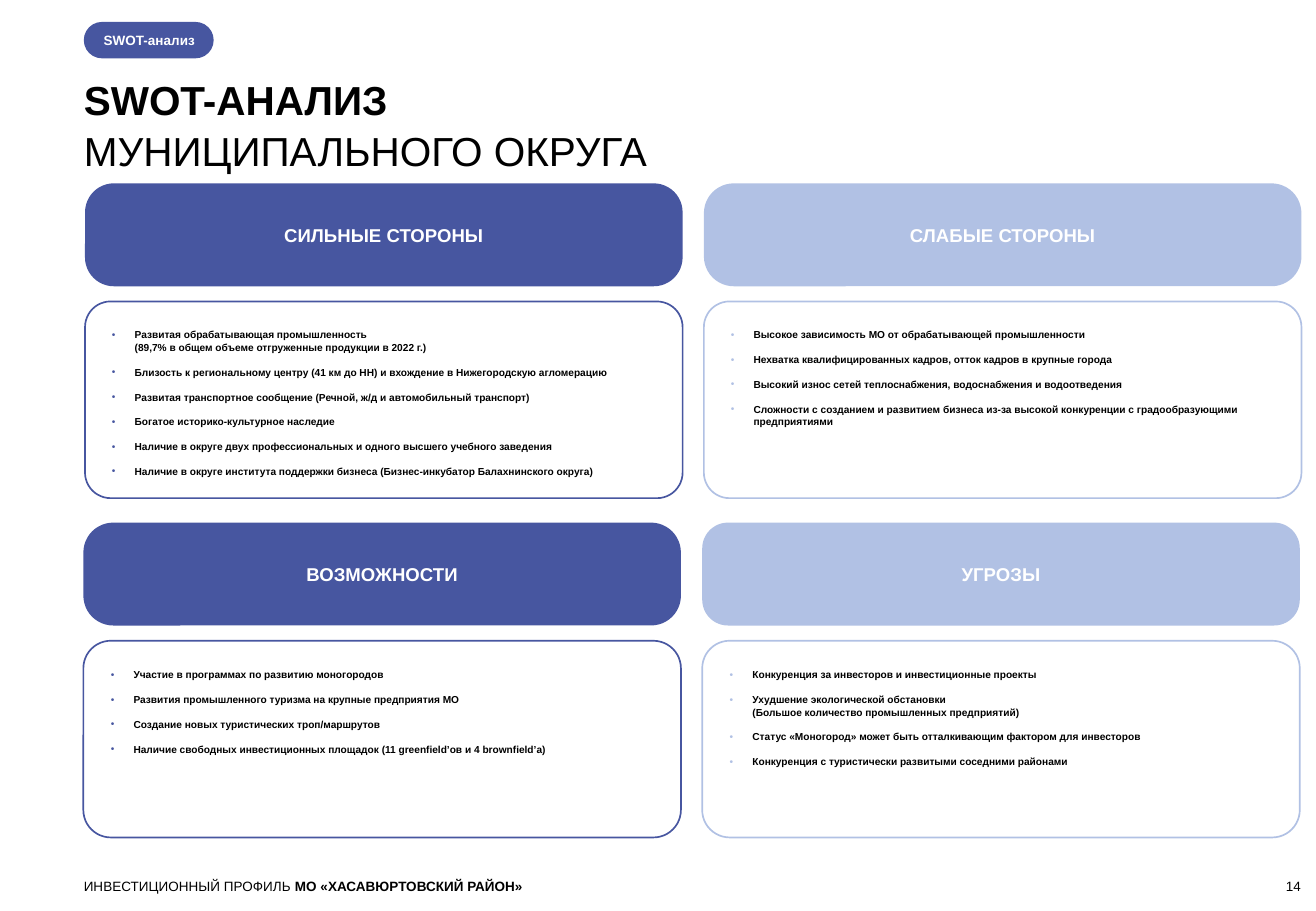
import pptx
import pptx.dml.color
import pptx.enum.shapes
import pptx.enum.text
import pptx.oxml.ns
import pptx.util
from lxml import etree

Pt = pptx.util.Pt
ALIGN = pptx.enum.text.PP_ALIGN
ANCHOR = pptx.enum.text.MSO_ANCHOR
DARK, LIGHT, WHITE, BLACK = "4756A0", "B1C1E4", "FFFFFF", "000000"


def color(value):
    return pptx.dml.color.RGBColor.from_string(value)


def write(shape, paragraphs, size, ink=BLACK, align=ALIGN.LEFT, anchor=ANCHOR.TOP,
          insets=(0, 0, 0, 0), bullet=None, gap=0, spacing=None):
    """Each paragraph is a list of (text, bold) runs; a newline breaks the line."""
    frame = shape.text_frame
    frame.word_wrap = True
    frame.vertical_anchor = anchor
    frame.margin_left, frame.margin_top, frame.margin_right, frame.margin_bottom = map(Pt, insets)
    for index, runs in enumerate(paragraphs):
        paragraph = frame.add_paragraph() if index else frame.paragraphs[0]
        paragraph.alignment = align
        if spacing:
            paragraph.line_spacing = spacing
        if index and gap:
            paragraph.space_before = Pt(gap)
        if bullet:
            properties = paragraph._p.get_or_add_pPr()
            properties.set("marL", str(Pt(13.5)))
            properties.set("indent", str(Pt(-13.5)))
            bullet_color = etree.SubElement(properties, pptx.oxml.ns.qn("a:buClr"))
            etree.SubElement(bullet_color, pptx.oxml.ns.qn("a:srgbClr"), val=bullet)
            etree.SubElement(properties, pptx.oxml.ns.qn("a:buFont"), typeface="Arial")
            etree.SubElement(properties, pptx.oxml.ns.qn("a:buChar"), char="•")
        for text, bold in runs:
            for number, line in enumerate(text.split("\n")):
                if number:
                    paragraph.add_line_break()
                run = paragraph.add_run()
                run.text = line
                run.font.name = "Arial"
                run.font.size = Pt(size)
                run.font.bold = bold
                run.font.color.rgb = color(ink)
        paragraph.font.size = Pt(size)


def rounded(left, top, width, height, radius, fill=None, line=None):
    shape = slide.shapes.add_shape(pptx.enum.shapes.MSO_SHAPE.ROUNDED_RECTANGLE,
                                   Pt(left), Pt(top), Pt(width), Pt(height))
    shape.adjustments[0] = radius
    shape.shadow.inherit = False
    if fill:
        shape.fill.solid()
        shape.fill.fore_color.rgb = color(fill)
    else:
        shape.fill.background()
    if line:
        shape.line.color.rgb = color(line)
        shape.line.width = Pt(1)
    else:
        shape.line.fill.background()
    return shape


presentation = pptx.Presentation()
presentation.slide_width, presentation.slide_height = Pt(780), Pt(540)
slide = presentation.slides.add_slide(presentation.slide_layouts[6])

# Section tag
tag = rounded(49.7, 13, 77, 21.6, 0.5, fill=DARK)
write(tag, [[("SWOT-анализ", True)]], 8, WHITE, anchor=ANCHOR.MIDDLE, insets=(8.6, 0, 0, 0))

# Title
title = slide.shapes.add_textbox(Pt(49.7), Pt(43.2), Pt(721.4), Pt(58.3))
write(title, [[("SWOT-АНАЛИЗ", True)], [("МУНИЦИПАЛЬНОГО ОКРУГА", False)]], 24, spacing=1.05)

# Four quadrants: left, top, accent, heading radius, body radius, heading, bullets
quadrants = [
    (50.4, 108.7, DARK, 0.28, 0.13, "СИЛЬНЫЕ СТОРОНЫ", [
        "Развитая обрабатывающая промышленность\n(89,7% в общем объеме отгруженные продукции в 2022 г.)",
        "Близость к региональному центру (41 км до НН) и вхождение в Нижегородскую агломерацию",
        "Развитая транспортное сообщение (Речной, ж/д и автомобильный транспорт)",
        "Богатое историко-культурное наследие",
        "Наличие в округе двух профессиональных и одного высшего учебного заведения",
        "Наличие в округе института поддержки бизнеса (Бизнес-инкубатор Балахнинского округа)",
    ]),
    (417.2, 108.7, LIGHT, 0.29, 0.13, "СЛАБЫЕ СТОРОНЫ", [
        "Высокое зависимость МО от обрабатывающей промышленности",
        "Нехватка квалифицированных кадров, отток кадров в крупные города",
        "Высокий износ сетей теплоснабжения, водоснабжения и водоотведения",
        "Сложности с созданием и развитием бизнеса из-за высокой конкуренции "
        "с градообразующими предприятиями",
    ]),
    (49.4, 309.8, DARK, 0.29, 0.14, "ВОЗМОЖНОСТИ", [
        "Участие в программах по развитию моногородов",
        "Развития промышленного туризма на крупные предприятия МО",
        "Создание новых туристических троп/маршрутов",
        "Наличие свободных инвестиционных площадок (11 greenfield’ов и 4 brownfield’а)",
    ]),
    (416.2, 309.8, LIGHT, 0.25, 0.14, "УГРОЗЫ", [
        "Конкуренция за инвесторов и инвестиционные проекты",
        "Ухудшение экологической обстановки\n(Большое количество промышленных предприятий)",
        "Статус «Моногород» может быть отталкивающим фактором для инвесторов",
        "Конкуренция с туристически развитыми соседними районами",
    ]),
]
for left, top, accent, heading_radius, body_radius, name, bullets in quadrants:
    heading = rounded(left, top, 354.2, 61, heading_radius, fill=accent)
    write(heading, [[(name, True)]], 11, WHITE, ALIGN.CENTER, ANCHOR.MIDDLE, (7.2, 3.6, 7.2, 3.6))
    body = rounded(left, top + 70, 354.2, 116.6, body_radius, line=accent)
    write(body, [[(text, True)] for text in bullets], 6, insets=(11.5, 11.5, 7.2, 3.6),
          bullet=accent, gap=7.2, spacing=1.04)

# Footer
footer = slide.shapes.add_textbox(Pt(49.7), Pt(520.6), Pt(576), Pt(9.4))
write(footer, [[("ИНВЕСТИЦИОННЫЙ ПРОФИЛЬ ", False), ("МО «ХАСАВЮРТОВСКИЙ РАЙОН»", True)]], 8)
page_number = slide.shapes.add_textbox(Pt(713.5), Pt(520.6), Pt(57.6), Pt(9.4))
write(page_number, [[("14", False)]], 8, align=ALIGN.RIGHT, anchor=ANCHOR.BOTTOM)

presentation.save("out.pptx")
